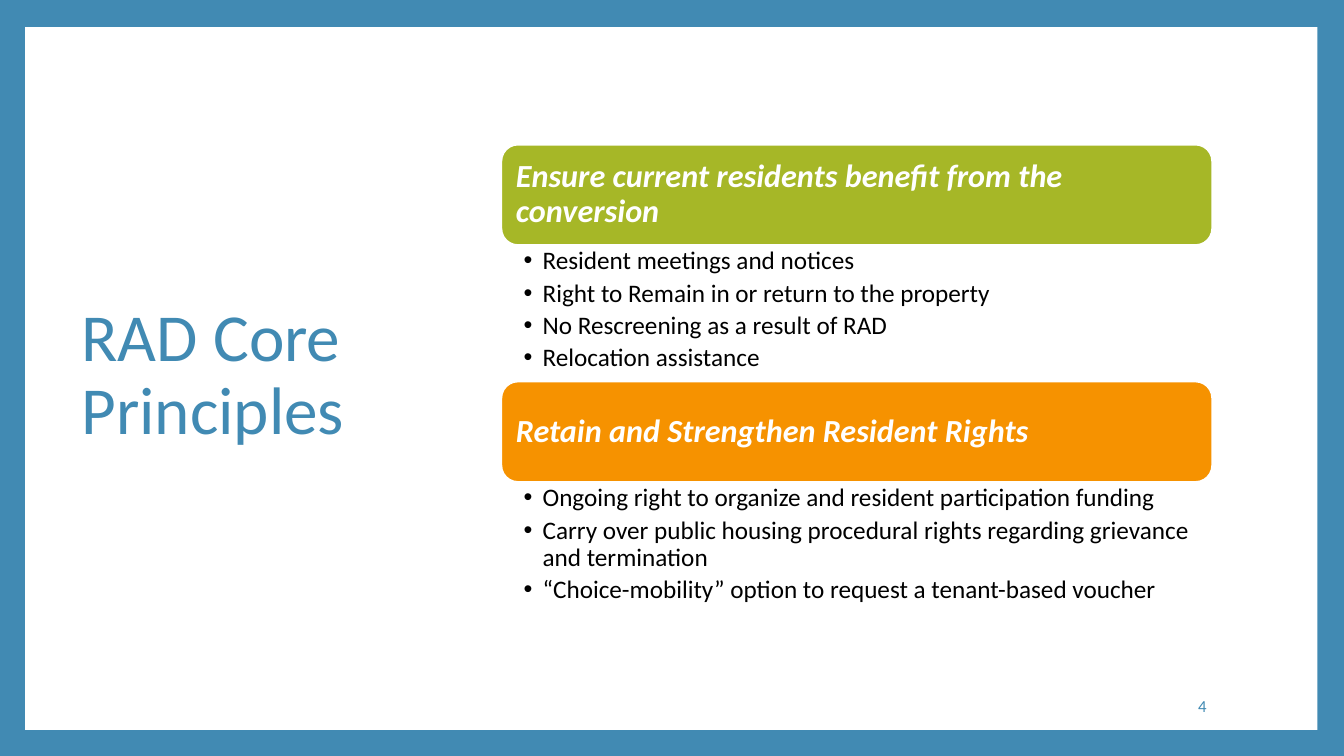
from dataclasses import dataclass

from lxml.etree import SubElement
from pptx import Presentation
from pptx.dml.color import RGBColor as RGB
from pptx.enum.shapes import MSO_SHAPE as Shape
from pptx.enum.text import MSO_ANCHOR as Anchor, PP_ALIGN as Align
from pptx.oxml.ns import qn
from pptx.util import Pt


@dataclass(frozen=True)
class Theme:
    font: str = "Calibri"
    blue: RGB = RGB(0x41, 0x8A, 0xB3)
    green: RGB = RGB(0xA6, 0xB7, 0x27)
    orange: RGB = RGB(0xF6, 0x92, 0x00)
    white: RGB = RGB(0xFF, 0xFF, 0xFF)
    black: RGB = RGB(0, 0, 0)
    title_size: int = 48
    heading_size: int = 23
    bullet_size: int = 18
    number_size: int = 12


@dataclass(frozen=True)
class Box:
    left: float
    top: float
    width: float
    height: float

    def lengths(self):
        return Pt(self.left), Pt(self.top), Pt(self.width), Pt(self.height)


THEME = Theme()
HEADING_HEIGHT = 72
PRINCIPLES = [
    (
        "Ensure current residents benefit from the conversion",
        THEME.green,
        [
            "Resident meetings and notices",
            "Right to Remain in or return to the property",
            "No Rescreening as a result of RAD",
            "Relocation assistance",
        ],
    ),
    (
        "Retain and Strengthen Resident Rights",
        THEME.orange,
        [
            "Ongoing right to organize and resident participation funding",
            "Carry over public housing procedural rights regarding grievance and termination",
            "“Choice-mobility” option to request a tenant-based voucher",
        ],
    ),
]


def set_frame(frame, anchor, left=7.2, top=3.6, right=7.2, bottom=3.6):
    frame.word_wrap = True
    frame.vertical_anchor = anchor
    frame.margin_left, frame.margin_top = Pt(left), Pt(top)
    frame.margin_right, frame.margin_bottom = Pt(right), Pt(bottom)


def style(paragraph, size, color, align=Align.LEFT, bold=False, italic=False):
    paragraph.alignment = align
    paragraph.line_spacing = 0.9
    font = paragraph.font
    font.name, font.size, font.color.rgb = THEME.font, Pt(size), color
    font.bold, font.italic = bold, italic


def add_bullet(paragraph, indent):
    properties = paragraph._p.get_or_add_pPr()
    properties.set("marL", str(Pt(indent)))
    properties.set("indent", str(-Pt(indent)))
    SubElement(properties, qn("a:buFont")).set("typeface", "Arial")
    SubElement(properties, qn("a:buChar")).set("char", "•")


def draw_backdrop(slide, box):
    slide.background.fill.solid()
    slide.background.fill.fore_color.rgb = THEME.blue
    panel = slide.shapes.add_shape(Shape.RECTANGLE, *box.lengths())
    panel.shadow.inherit = False
    panel.fill.solid()
    panel.fill.fore_color.rgb = THEME.white
    panel.line.fill.background()


def draw_label(slide, box, text, size, align=Align.LEFT):
    frame = slide.shapes.add_textbox(*box.lengths()).text_frame
    set_frame(frame, Anchor.MIDDLE)
    frame.text = text
    style(frame.paragraphs[0], size, THEME.blue, align)


def draw_heading(slide, box, text, color):
    heading = slide.shapes.add_shape(Shape.ROUNDED_RECTANGLE, *box.lengths())
    heading.shadow.inherit = False
    heading.fill.solid()
    heading.fill.fore_color.rgb = color
    heading.line.color.rgb = THEME.white
    heading.line.width = Pt(1.5)
    frame = heading.text_frame
    set_frame(frame, Anchor.MIDDLE, 7.2, 7.2, 7.2, 7.2)
    frame.text = text
    style(frame.paragraphs[0], THEME.heading_size, THEME.white, bold=True, italic=True)


def draw_bullets(slide, box, bullets):
    frame = slide.shapes.add_textbox(*box.lengths()).text_frame
    set_frame(frame, Anchor.TOP, 16.1, 2, 12.8, 2)
    frame.text = "\n".join(bullets)
    for paragraph in frame.paragraphs:
        paragraph.space_after = Pt(3.6)
        add_bullet(paragraph, 13.5)
        style(paragraph, THEME.bullet_size, THEME.black)


def draw_principles(slide, box):
    pitch = box.height / len(PRINCIPLES)
    for index, (heading, color, bullets) in enumerate(PRINCIPLES):
        top = box.top + index * pitch
        draw_heading(slide, Box(box.left, top, box.width, HEADING_HEIGHT), heading, color)
        bullets_box = Box(box.left, top + HEADING_HEIGHT, box.width, pitch - HEADING_HEIGHT)
        draw_bullets(slide, bullets_box, bullets)


def main():
    deck = Presentation()
    deck.slide_width, deck.slide_height = Pt(960), Pt(540)
    slide = deck.slides.add_slide(deck.slide_layouts[6])
    draw_backdrop(slide, Box(18, 19.3, 923, 502))
    draw_label(slide, Box(51.1, 48.2, 265, 441.4), "RAD Core Principles", THEME.title_size)
    draw_label(slide, Box(734.4, 490.3, 134.6, 28.8), "4", THEME.number_size, Align.RIGHT)
    draw_principles(slide, Box(358, 103.2, 508, 338.4))
    deck.save("out.pptx")


if __name__ == "__main__":
    main()
